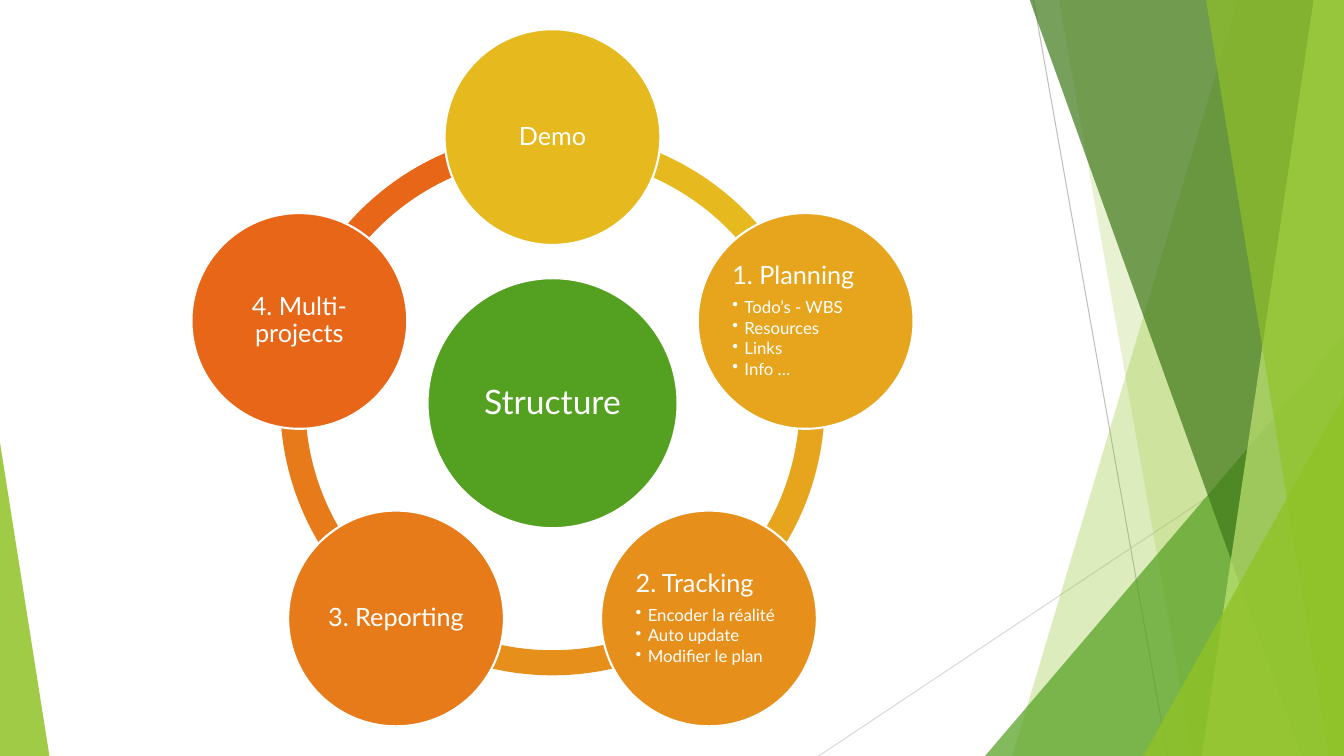
from math import cos, radians, sin

from lxml.etree import SubElement
from pptx import Presentation
from pptx.dml.color import RGBColor
from pptx.enum.shapes import MSO_CONNECTOR as Connector, MSO_SHAPE as Shape
from pptx.enum.text import MSO_ANCHOR as Anchor, PP_ALIGN as Align
from pptx.oxml.ns import qn
from pptx.util import Inches, Pt

WIDTH, HEIGHT = 13.33, 7.5
WHITE = RGBColor(0xFF, 0xFF, 0xFF)
GRAY = RGBColor(0xBF, 0xBF, 0xBF)
PALE_GRAY = RGBColor(0xD9, 0xD9, 0xD9)
LIME = RGBColor(0x90, 0xC2, 0x26)
PALE_LIME = RGBColor(0xC0, 0xE4, 0x74)
GREEN = RGBColor(0x54, 0xA0, 0x21)
DARK_GREEN = RGBColor(0x3F, 0x78, 0x19)
YELLOW = RGBColor(0xE6, 0xB9, 0x1E)
GOLD = RGBColor(0xE6, 0xA5, 0x1D)
AMBER = RGBColor(0xE6, 0x90, 0x1B)
ORANGE = RGBColor(0xE7, 0x7B, 0x19)
RED_ORANGE = RGBColor(0xE7, 0x66, 0x18)

CENTER_X, CENTER_Y = 5.48, 4.0
ORBIT, RING_SIZE = 2.64, 5.4
NODE_SIZE, HUB_SIZE = 2.14, 2.48
NODES = [
    ("Demo", YELLOW, []),
    ("1. Planning", GOLD, ["Todo’s - WBS", "Resources", "Links", "Info …"]),
    ("2. Tracking", AMBER, ["Encoder la réalité", "Auto update", "Modifier le plan"]),
    ("3. Reporting", ORANGE, []),
    ("4. Multi-projects", RED_ORANGE, []),
]
STEP = 360 / len(NODES)


def write(para, text, size, align=Align.LEFT, after=0.35, bullet=False):
    """Fill a paragraph with one formatted span."""
    para.alignment = align
    para.line_spacing = 0.9
    para.space_after = Pt(round(size * after, 1))
    if bullet:
        para.level = 1
        properties = para._p.get_or_add_pPr()
        properties.set("marL", str(Inches(0.12)))
        properties.set("indent", str(-Inches(0.12)))
        SubElement(properties, qn("a:buChar"), char="•")
    span = para.add_run()
    span.text = text
    span.font.name = "Lato"
    span.font.size = Pt(size)
    span.font.color.rgb = WHITE


class Painter:
    """Draw styled elements on the current page."""

    def __init__(self, page):
        self.shapes = page.shapes

    def paint(self, shape, color, opacity=100, outline=False):
        """Set fill, opacity and outline of a shape."""
        shape.shadow.inherit = False
        shape.fill.solid()
        shape.fill.fore_color.rgb = color
        if opacity < 100:
            tint = shape.element.spPr.find(qn("a:solidFill"))[0]
            SubElement(tint, qn("a:alpha"), val=str(opacity * 1000))
        if outline:
            shape.line.color.rgb = WHITE
            shape.line.width = Pt(1.5)
        else:
            shape.line.fill.background()

    def preset(self, kind, left, top, width, height, color, adjust=(), **style):
        """Add a preset shape with its adjustments."""
        shape = self.shapes.add_shape(
            kind, Inches(left), Inches(top), Inches(width), Inches(height))
        for index, value in enumerate(adjust):
            shape.adjustments[index] = value
        self.paint(shape, color, **style)

    def band(self, top_x, bottom_x, color, opacity):
        """Add a slanted band that reaches the right edge."""
        corners = [(top_x, -0.01), (WIDTH, -0.01), (WIDTH, HEIGHT), (bottom_x, HEIGHT)]
        points = [(Inches(x), Inches(y)) for x, y in corners]
        builder = self.shapes.build_freeform(*points[0])
        builder.add_line_segments(points[1:], close=True)
        self.paint(builder.convert_to_shape(), color, opacity)

    def triangle(self, left, top, width, peak, color, opacity):
        """Add a triangle that stands on the bottom edge."""
        self.preset(Shape.ISOSCELES_TRIANGLE, left, top, width, HEIGHT - top,
                    color, [peak], opacity=opacity)

    def line(self, x1, y1, x2, y2, color):
        """Add a thin straight line."""
        line = self.shapes.add_connector(
            Connector.STRAIGHT, Inches(x1), Inches(y1), Inches(x2), Inches(y2))
        line.line.color.rgb = color
        line.line.width = Pt(0.75)
        SubElement(line.element.spPr, qn("a:effectLst"))

    def arc(self, start, color):
        """Add the ring piece that leads from one node to the next."""
        angles = [start % 360 * 0.6, (start + STEP) % 360 * 0.6]
        self.preset(Shape.BLOCK_ARC, CENTER_X - RING_SIZE / 2, CENTER_Y - RING_SIZE / 2,
                    RING_SIZE, RING_SIZE, color, angles + [0.046])

    def circle(self, x, y, size, color, title, title_size, items=()):
        """Add a circle with a title and bullets in its inner square."""
        self.preset(Shape.OVAL, x - size / 2, y - size / 2, size, size, color, outline=True)
        side = size * sin(radians(45))
        box = self.shapes.add_textbox(
            Inches(x - side / 2), Inches(y - side / 2), Inches(side), Inches(side))
        frame = box.text_frame
        frame.word_wrap = True
        frame.vertical_anchor = Anchor.MIDDLE
        frame.margin_left = frame.margin_right = Inches(0.03)
        frame.margin_top = frame.margin_bottom = Inches(0.03)
        write(frame.paragraphs[0], title, title_size,
              align=Align.LEFT if items else Align.CENTER)
        for item in items:
            write(frame.add_paragraph(), item, 12, after=0.15, bullet=True)


def draw_backdrop(painter):
    """Draw the green facets along the page edges."""
    painter.line(10.25, 0, 11.58, HEIGHT, GRAY)
    painter.line(WIDTH, 4.03, 8.12, HEIGHT, PALE_GRAY)
    painter.band(12.28, 10.04, LIME, 30)
    painter.band(10.5, 11.83, LIME, 20)
    painter.triangle(9.77, 3.33, 3.56, 1, GREEN, 72)
    painter.band(10.21, 12.91, DARK_GREEN, 70)
    painter.band(13.03, 11.92, PALE_LIME, 70)
    painter.band(11.96, 13.18, LIME, 65)
    painter.triangle(11.34, 3.93, 1.99, 1, LIME, 80)
    painter.triangle(0, 4.39, 0.49, 0, LIME, 85)


def draw_cycle(painter):
    """Draw the ring, the hub and the nodes around it."""
    angles = [270 + STEP * index for index in range(len(NODES))]
    for angle, (title, color, items) in reversed(list(zip(angles, NODES))):
        painter.arc(angle, color)
    painter.circle(CENTER_X, CENTER_Y, HUB_SIZE, GREEN, "Structure", 24)
    for angle, (title, color, items) in zip(angles, NODES):
        x = CENTER_X + ORBIT * cos(radians(angle))
        y = CENTER_Y + ORBIT * sin(radians(angle))
        painter.circle(x, y, NODE_SIZE, color, title, 18, items)


def main():
    """Build and save the deck."""
    deck = Presentation()
    deck.slide_width, deck.slide_height = Inches(WIDTH), Inches(HEIGHT)
    painter = Painter(deck.slides.add_slide(deck.slide_layouts[6]))
    draw_backdrop(painter)
    draw_cycle(painter)
    deck.save("out.pptx")


if __name__ == "__main__":
    main()
